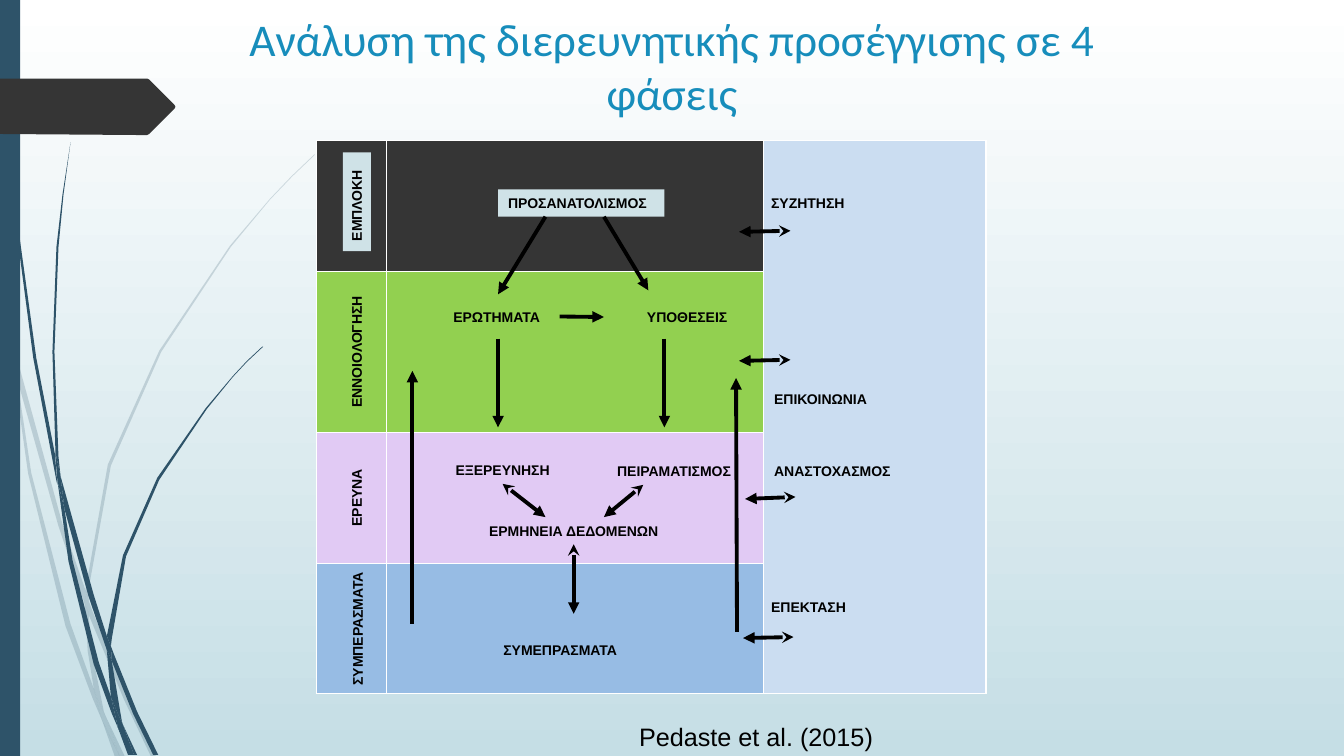
from lxml import etree
from pptx import Presentation
from pptx import util as u
from pptx.dml.color import RGBColor
from pptx.enum import shapes, text
from pptx.oxml import ns

NAVY, DARK, PALE, WHITE, BLACK = "2E5369", "353535", "CFE2E7", "FFFFFF", "000000"

FAINT_WISPS = [
    [(.11, 3.5), (.09, 3.22), (0, 2.82), (0, 2.99), (.1, 3.44)],
    [(.58, 5.22), (.84, 5.99), (.85, 5.86), (.62, 5.2), (.14, 3.45), (.17, 3.76)],
    [(.92, 6.07), (.88, 5.96), (.88, 6.1), (1.23, 6.94), (1.5, 7.51), (1.55, 7.51), (1.27, 6.92)],
    [(1.19, 7.51), (1.24, 7.51), (1.05, 7.11)],
    [(.93, 6.83), (.7, 6.19), (.31, 4.69), (.17, 3.76), (.11, 3.5), (.28, 4.7), (.65, 6.21),
     (.92, 6.93), (1.01, 7.14), (.99, 7.07)],
    [(.84, 5.99), (.87, 6.46), (.93, 6.83), (.96, 6.92), (1.05, 7.11), (1.03, 7.06),
     (.91, 6.46), (.88, 6.1), (.88, 6.08)],
    [(.88, 5.84), (1.1, 4.62), (1.6, 3.49), (2.29, 2.45), (2.68, 1.98), (2.9, 1.75),
     (3.12, 1.54), (3.12, 1.53), (2.89, 1.75), (2.68, 1.97), (2.28, 2.44), (1.58, 3.48),
     (1.07, 4.61), (.85, 5.84), (.85, 5.86), (.88, 5.96)],
    [(1.01, 7.14), (1.14, 7.51), (1.19, 7.51)],
    [(.88, 6.08), (.88, 6.1), (.88, 5.96), (.85, 5.86), (.84, 5.99)],
    [(.96, 6.92), (.93, 6.83), (.99, 7.07), (1.01, 7.14), (1.19, 7.51), (1.05, 7.11)]]

SOLID_WISPS = [
    [(.07, 1.1), (.17, 2.33), (.33, 3.55), (.56, 4.77), (.57, 4.81), (.55, 4.57), (.55, 4.53),
     (.36, 3.55), (.19, 2.32), (.08, 1.09), (.05, .48), (.04, 0), (.03, 0), (.04, .48)],
    [(.88, 5.92), (1.06, 6.45), (1.06, 6.33), (1.06, 6.31), (.93, 5.9), (.6, 4.72), (.64, 5.05)],
    [(1.13, 6.49), (1.1, 6.41), (1.11, 6.56), (1.32, 7.08), (1.52, 7.49), (1.57, 7.49),
     (1.36, 7.06)],
    [(1.1, 6.91), (.98, 6.57), (.72, 5.56), (.64, 5.05), (.57, 4.77), (.68, 5.57), (.93, 6.59),
     (1.11, 7.08), (1.17, 7.22), (1.16, 7.17)],
    [(.6, 4.72), (.58, 4.53), (.54, 3.49), (.58, 2.45), (.63, 1.93), (.7, 1.41), (.62, 1.93),
     (.56, 2.45), (.52, 3.49), (.55, 4.49)],
    [(1.33, 7.49), (1.36, 7.49), (1.22, 7.19)],
    [(.57, 4.77), (.64, 5.05), (.6, 4.72), (.55, 4.49), (.55, 4.53)],
    [(1.11, 6.33), (1.25, 5.52), (1.58, 4.76), (2.05, 4.06), (2.31, 3.74), (2.45, 3.59),
     (2.61, 3.44), (2.6, 3.44), (2.45, 3.58), (2.31, 3.73), (2.04, 4.05), (1.56, 4.74),
     (1.22, 5.51), (1.06, 6.31), (1.1, 6.41)],
    [(1.17, 7.22), (1.27, 7.49), (1.31, 7.49)],
    [(1.06, 6.45), (1.1, 6.91), (1.16, 7.06), (1.22, 7.19), (1.21, 7.16), (1.11, 6.56),
     (1.09, 6.51)],
    [(1.06, 6.45), (1.09, 6.51), (1.11, 6.56), (1.1, 6.41), (1.06, 6.31), (1.06, 6.33)],
    [(1.16, 7.06), (1.1, 6.91), (1.16, 7.17), (1.17, 7.22), (1.3, 7.49), (1.33, 7.49),
     (1.22, 7.19)]]

TAG = [(0, .78), (1.46, .78), (1.48, .79), (1.73, 1.04), (1.74, 1.06), (1.73, 1.08),
       (1.48, 1.33), (1.46, 1.34), (1.36, 1.34), (0, 1.33)]


def rgb(value):
    return RGBColor.from_string(value)


def add_xml(parent, tag, **attrs):
    return etree.SubElement(parent, ns.qn(tag), attrs)


def write(shape, content, size=10, font="Arial", color=BLACK, bold=True,
          align=text.PP_ALIGN.LEFT, wrap=True):
    tf = shape.text_frame
    tf.word_wrap = wrap
    tf.vertical_anchor = text.MSO_ANCHOR.TOP
    p = tf.paragraphs[0]
    p.alignment = align
    r = p.add_run()
    r.text = content
    r.font.size, r.font.name, r.font.bold = u.Pt(size), font, bold
    r.font.color.rgb = rgb(color)


class Board:
    """Draws styled elements on the current slide."""

    def __init__(self, prs):
        self.s = prs.slides.add_slide(prs.slide_layouts[6])

    def background(self, top, bottom):
        fill = self.s.background.fill
        fill.gradient()
        fill.gradient_angle = 270
        for stop, color in zip(fill.gradient_stops, (top, bottom)):
            stop.color.rgb = rgb(color)

    def paint(self, sp, color):
        sp.shadow.inherit = False
        sp.fill.solid()
        sp.fill.fore_color.rgb = rgb(color)
        sp.line.fill.background()
        return sp

    def block(self, box, color):
        kind = shapes.MSO_SHAPE.RECTANGLE
        return self.paint(self.s.shapes.add_shape(kind, *map(u.Inches, box)), color)

    def label(self, content, box, fill=None, rotation=0, **style):
        if fill:
            sp = self.block(box, fill)
        else:
            sp = self.s.shapes.add_textbox(*map(u.Inches, box))
        sp.rotation = rotation
        write(sp, content, **style)
        return sp

    def outline(self, points, color, opacity=100):
        corners = [(u.Inches(x), u.Inches(y)) for x, y in points]
        builder = self.s.shapes.build_freeform(*corners[0])
        builder.add_line_segments(corners[1:], close=True)
        sp = self.paint(builder.convert_to_shape(), color)
        if opacity < 100:
            tint = sp._element.spPr.find(".//" + ns.qn("a:srgbClr"))
            add_xml(tint, "a:alpha", val=str(opacity * 1000))

    def arrow(self, start, end, both=False, begin=None, finish=None):
        c = self.s.shapes.add_connector(
            shapes.MSO_CONNECTOR.STRAIGHT, *map(u.Inches, start + end))
        if begin:
            c.begin_connect(*begin)
        if finish:
            c.end_connect(*finish)
        c.line.color.rgb = rgb(BLACK)
        c.line.width = u.Pt(2.75)
        ln = c.line._get_or_add_ln()
        if both:
            add_xml(ln, "a:headEnd", type="stealth")
        add_xml(ln, "a:tailEnd", type="triangle")
        add_xml(c._element.spPr, "a:effectLst")

    def table(self, box, cols, rows, fills, side):
        table = self.s.shapes.add_table(len(rows), len(cols), *map(u.Inches, box)).table
        for col, width in zip(table.columns, cols):
            col.width = u.Inches(width)
        for row, height, fill in zip(table.rows, rows, fills):
            row.height = u.Inches(height)
            for cell, color in zip(row.cells, (fill, fill, side)):
                tcPr = cell._tc.get_or_add_tcPr()
                for edge in ("a:lnL", "a:lnR", "a:lnT", "a:lnB"):
                    ln = add_xml(tcPr, edge, w=str(u.Pt(1)))
                    add_xml(add_xml(ln, "a:solidFill"), "a:srgbClr", val=WHITE)
                cell.fill.solid()
                cell.fill.fore_color.rgb = rgb(color)
        table.cell(0, 2).merge(table.cell(len(rows) - 1, 2))


def main():
    prs = Presentation()
    prs.slide_width, prs.slide_height = u.Inches(13.33), u.Inches(7.5)
    b = Board(prs)
    b.background(WHITE, "C5DEE5")
    for points in FAINT_WISPS:
        b.outline(points, NAVY, opacity=20)
    for points in SOLID_WISPS:
        b.outline(points, NAVY)
    b.block((0, 0, .2, 7.5), NAVY)
    b.outline(TAG, DARK)

    center = text.PP_ALIGN.CENTER
    b.label("Pedaste et al. (2015)", (6.24, 7.11, 2.54, .4), size=18, bold=False, wrap=False)
    b.table((3.14, 1.39, 6.64, 5.49), (.69, 3.74, 2.21), (1.3, 1.6, 1.3, 1.29),
            (DARK, "92D050", "E1CAF4", "97BCE4"), "CBDDF1")

    steps = {
        name: b.label(name, (x, y, width, .27), align=center)
        for name, x, y, width in [
            ("ΕΡΩΤΗΜΑΤΑ", 4.1, 3.01, 1.65), ("ΥΠΟΘΕΣΕΙΣ", 5.99, 3.01, 1.65),
            ("ΕΞΕΡΕΥΝΗΣΗ", 4.16, 4.53, 1.65), ("ΠΕΙΡΑΜΑΤΙΣΜΟΣ", 5.86, 4.54, 1.65),
            ("ΕΡΜΗΝΕΙΑ ΔΕΔΟΜΕΝΩΝ", 4.71, 5.13, 1.96), ("ΣΥΜΕΠΡΑΣΜΑΤΑ", 4.73, 6.32, 1.65)]}
    for name, x, y in [("ΣΥΖΗΤΗΣΗ", 7.55, 1.88), ("ΕΠΙΚΟΙΝΩΝΙΑ", 7.58, 3.83),
                       ("ΑΝΑΣΤΟΧΑΣΜΟΣ", 7.58, 4.54), ("ΕΠΕΚΤΑΣΗ", 7.55, 5.89)]:
        b.label(name, (x, y, 1.65, .27))
    for name, x, y in [("ΕΝΝΟΙΟΛΟΓΗΣΗ", 2.71, 3.18), ("ΕΡΕΥΝΑ", 2.71, 4.36),
                       ("ΣΥΜΠΕΡΑΣΜΑΤΑ", 2.72, 5.94)]:
        b.label(name, (x, y, 1.65, .27), rotation=270)
    b.label("ΕΜΠΛΟΚΗ", (3.05, 1.86, .98, .28), fill=PALE, rotation=270)
    b.label("ΠΡΟΣΑΝΑΤΟΛΙΣΜΟΣ", (4.94, 1.88, 1.65, .27), fill=PALE)

    for start, end in [((5.41, 2.15), (4.94, 2.92)), ((5.99, 2.15), (6.43, 2.88)),
                       ((4.94, 3.36), (4.94, 4.24)), ((6.59, 3.36), (6.59, 4.24)),
                       ((7.31, 6.27), (7.3, 3.75)), ((4.09, 6.19), (4.09, 3.68))]:
        b.arrow(start, end)
    b.arrow((5.55, 3.14), (5.99, 3.14), finish=(steps["ΥΠΟΘΕΣΕΙΣ"], 1))
    b.arrow((4.99, 4.8), (5.41, 5.13), both=True, begin=(steps["ΕΞΕΡΕΥΝΗΣΗ"], 2))
    b.arrow((6.38, 4.81), (5.99, 5.13), both=True)
    b.arrow((5.69, 5.4), (5.69, 6.09), both=True, begin=(steps["ΕΡΜΗΝΕΙΑ ΔΕΔΟΜΕΝΩΝ"], 2))
    for start, end in [((7.84, 2.29), (7.33, 2.3)), ((7.84, 3.57), (7.33, 3.58)),
                       ((7.89, 4.93), (7.39, 4.95)), ((7.87, 6.32), (7.37, 6.33))]:
        b.arrow(start, end, both=True)

    b.label("Ανάλυση της διερευνητικής προσέγγισης σε 4 φάσεις", (2.19, .06, 8.95, 1.25),
            size=32.4, font="Calibri", color="178DBB", bold=False, align=center)
    prs.save("out.pptx")


if __name__ == "__main__":
    main()
